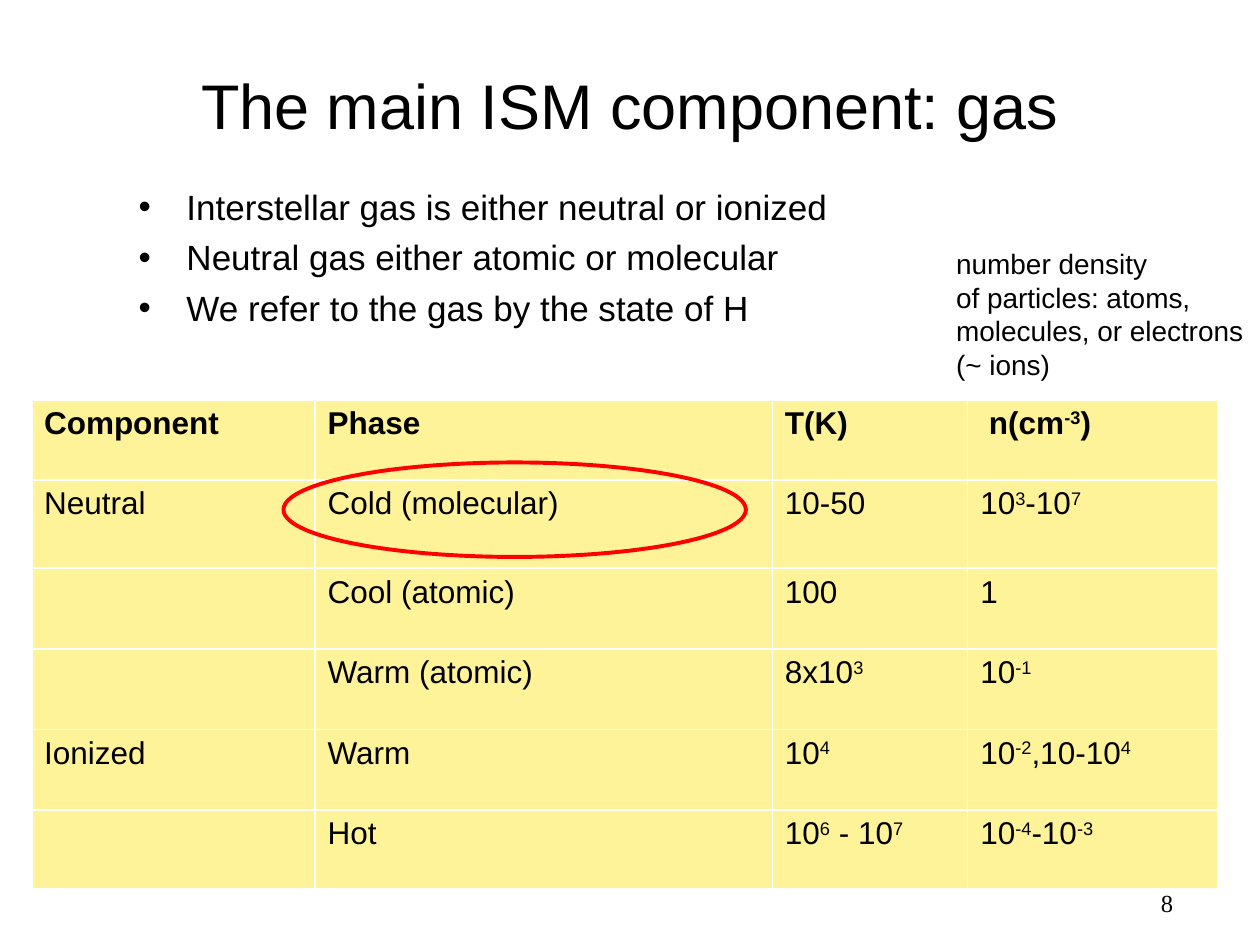
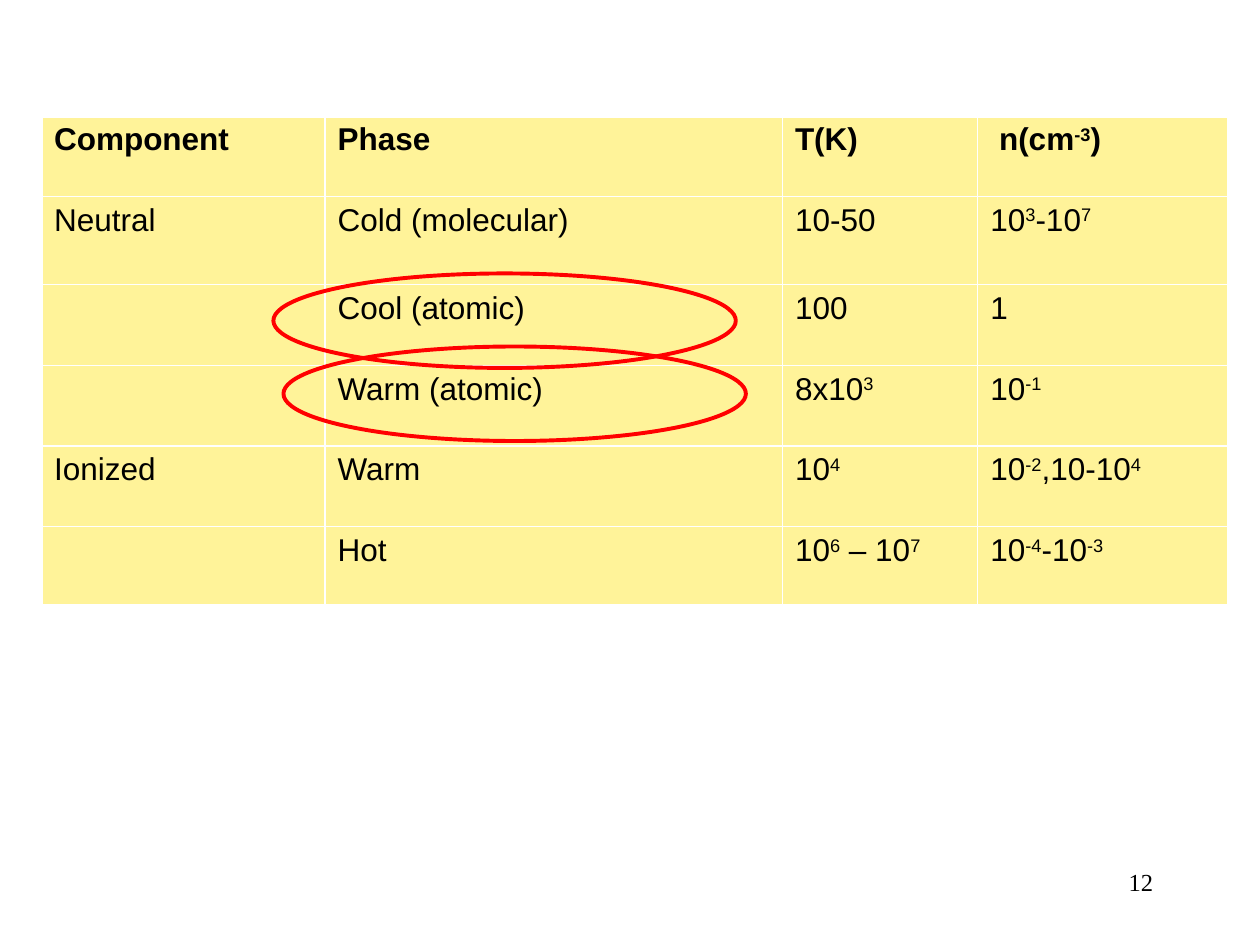
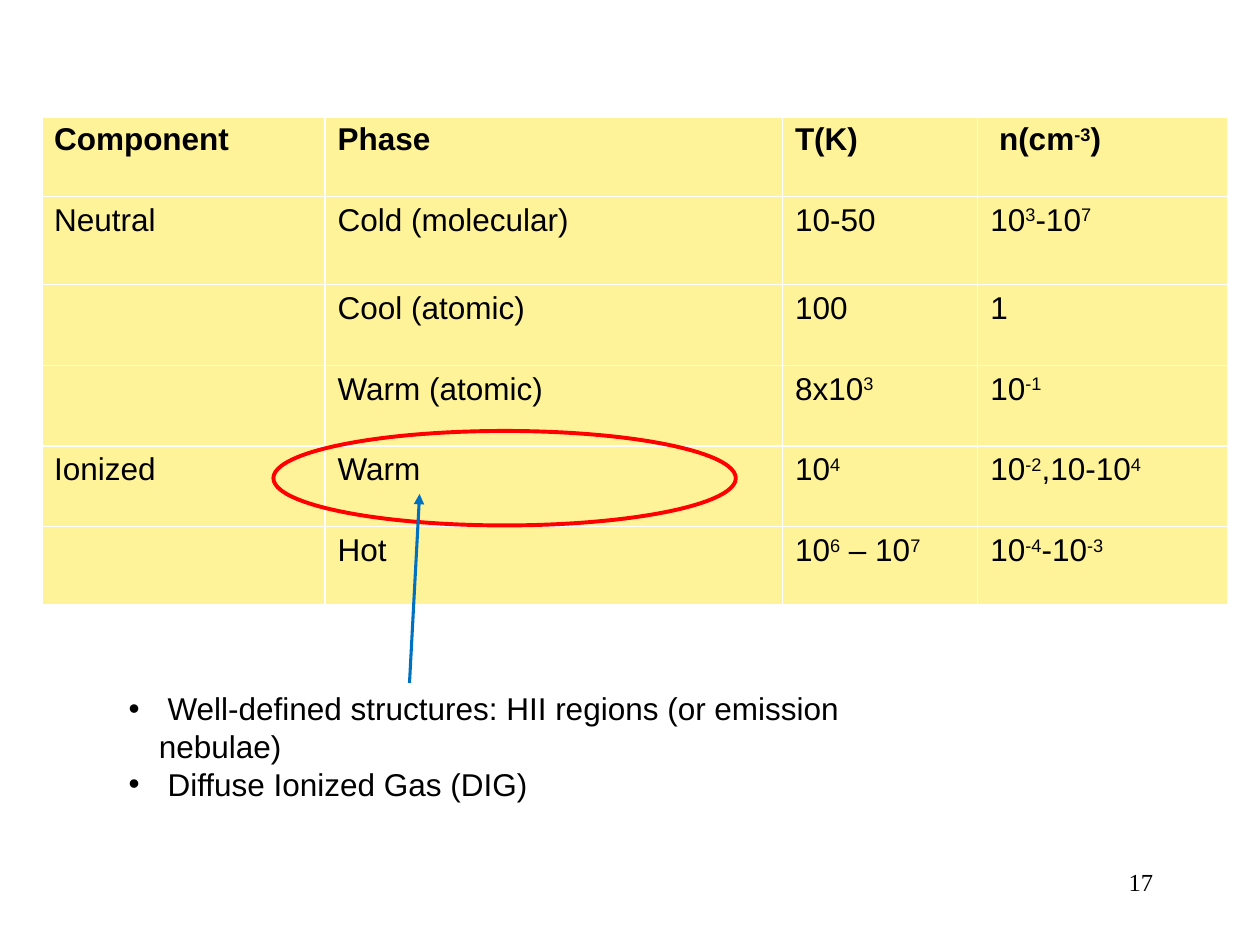
from lxml import etree
from pptx import Presentation
from pptx.dml.color import RGBColor
from pptx.enum import shapes, text
from pptx.oxml import ns
from pptx.util import Inches, Pt

HUES = {"ink": "000000", "cell": "FFF399", "rule": "FFFFFF", "ring": "FF0000", "arrow": "0070C0"}
COLS = [2.25, 3.63, 1.55, 1.99]
ROWS = [0.64, 0.7, 0.64, 0.64, 0.64, 0.63]
RING = (3.67, 0.75)
GAS = [
    ("Component", "Phase", "T(K)", " n(cm^-3^)"),
    ("Neutral", "Cold (molecular)", "10-50", "10^3^-10^7^"),
    ("", "Cool (atomic)", "100", "1"),
    ("", "Warm (atomic)", "8x10^3^", "10^-1^"),
    ("Ionized", "Warm", "10^4^", "10^-2^,10-10^4^"),
    ("", "Hot", "10^6^ {dash} 10^7^", "10^-4^-10^-3^"),
]
SLIDES = [
    {
        "title": "The main ISM component: gas",
        "list": {
            "lines": [
                "Interstellar gas is either neutral or ionized",
                "Neutral gas either atomic or molecular",
                "We refer to the gas by the state of H",
            ],
            "box": (1, 1.42, 8.58, 1.5), "size": 20, "indent": 0.38, "before": 5,
        },
        "note": ["number density", "of particles: atoms,", "molecules, or electrons", "(~ ions)"],
        "grid": (0.25, 3.17), "dash": "-", "rings": [(2.25, 3.67)],
        "page": "8", "foot": (7.33, 7),
    },
    {
        "grid": (0.33, 0.92), "dash": "–", "rings": [(2.17, 2.17), (2.25, 2.75)],
        "page": "12", "foot": (7.17, 6.83),
    },
    {
        "list": {
            "lines": [
                " Well-defined structures: HII regions (or emission nebulae)",
                " Diffuse Ionized Gas (DIG)",
            ],
            "box": (0.92, 5.42, 6.79, 1), "size": 18, "indent": 0.24, "before": 0,
        },
        "grid": (0.33, 0.92), "dash": "–", "rings": [(2.17, 3.42)],
        "arrow": (3.25, 5.42, 3.33, 3.92),
        "page": "17", "foot": (7.17, 6.83),
    },
]


def hue(name):
    return RGBColor.from_string(HUES[name])


def sub(node, tag, **attrs):
    return etree.SubElement(node, ns.qn(tag), **attrs)


def place(shape, box):
    shape.left, shape.top, shape.width, shape.height = map(Inches, box)


def put(frame, lines, size=18, font="Arial", bold=False, align=None, before=0, indent=0):
    for i, line in enumerate(lines):
        para = frame.add_paragraph() if i else frame.paragraphs[0]
        para.alignment = align
        para.space_before = Pt(before)
        if indent:
            props = para._p.get_or_add_pPr()
            props.set("marL", str(Inches(indent)))
            props.set("indent", str(-Inches(indent)))
        for k, part in enumerate(line.split("^")):
            if not part:
                continue
            run = para.add_run()
            run.text = part
            run.font.size, run.font.name, run.font.bold = Pt(size), font, bold
            run.font.color.rgb = hue("ink")
            if k % 2:
                run.font._element.set("baseline", "30000")


def add_text(slide, box, lines, wrap=True, **style):
    frame = slide.shapes.add_textbox(*map(Inches, box)).text_frame
    frame.word_wrap = wrap
    put(frame, lines, **style)


def edge(cell, outer):
    props = cell._tc.get_or_add_tcPr()
    for side in "LRTB":
        width = Pt(2.25 if side in outer else 1)
        line = sub(props, f"a:ln{side}", w=str(width))
        sub(sub(line, "a:solidFill"), "a:srgbClr", val=HUES["rule"])


def add_grid(slide, spot, dash):
    box = (*spot, sum(COLS), sum(ROWS))
    table = slide.shapes.add_table(len(ROWS), len(COLS), *map(Inches, box)).table
    table.horz_banding = False
    for col, width in zip(table.columns, COLS):
        col.width = Inches(width)
    for r, (row, height) in enumerate(zip(table.rows, ROWS)):
        row.height = Inches(height)
        for c, cell in enumerate(row.cells):
            ends = {"L": c == 0, "R": c == len(COLS) - 1, "T": r == 0, "B": r == len(ROWS) - 1}
            edge(cell, [side for side in ends if ends[side]])
            cell.fill.solid()
            cell.fill.fore_color.rgb = hue("cell")
            put(cell.text_frame, [GAS[r][c].format(dash=dash)], bold=r == 0, before=4)


def add_ring(slide, spot):
    ring = slide.shapes.add_shape(shapes.MSO_SHAPE.OVAL, *map(Inches, spot + RING))
    ring.shadow.inherit = False
    ring.fill.background()
    ring.line.color.rgb = hue("ring")
    ring.line.width = Pt(2.25)


def add_arrow(slide, ends):
    link = slide.shapes.add_connector(shapes.MSO_CONNECTOR.STRAIGHT, *map(Inches, ends))
    link.line.color.rgb = hue("arrow")
    link.line.width = Pt(1.75)
    props = link._element.spPr
    sub(props.find(ns.qn("a:ln")), "a:tailEnd", type="triangle")
    sub(props, "a:effectLst")


def add_slide(deck, data):
    slide = deck.slides.add_slide(deck.slide_layouts[1 if "list" in data else 6])
    title = slide.shapes.title
    if "title" in data:
        place(title, (0.75, 0.33, 8.5, 1))
        title.text_frame.vertical_anchor = text.MSO_ANCHOR.MIDDLE
        put(title.text_frame, [data["title"]], size=36, align=text.PP_ALIGN.CENTER)
    elif title is not None:
        title._element.getparent().remove(title._element)
    add_grid(slide, data["grid"], data["dash"])
    for spot in data["rings"]:
        add_ring(slide, spot)
    if "note" in data:
        add_text(slide, (7.49, 1.91, 2.51, 1.18), data["note"], wrap=False, size=16)
    if "list" in data:
        part = data["list"]
        body = slide.placeholders[1]
        place(body, part["box"])
        body.text_frame.auto_size = text.MSO_AUTO_SIZE.NONE
        put(body.text_frame, part["lines"], size=part["size"], indent=part["indent"], before=part["before"])
    if "arrow" in data:
        add_arrow(slide, data["arrow"])
    add_text(slide, (*data["foot"], 2.08, 0.5), [data["page"]], size=14,
             font="Times New Roman", align=text.PP_ALIGN.RIGHT)


def main():
    deck = Presentation()
    deck.slide_width, deck.slide_height = Inches(10), Inches(7.5)
    for data in SLIDES:
        add_slide(deck, data)
    deck.save("out.pptx")


if __name__ == "__main__":
    main()
